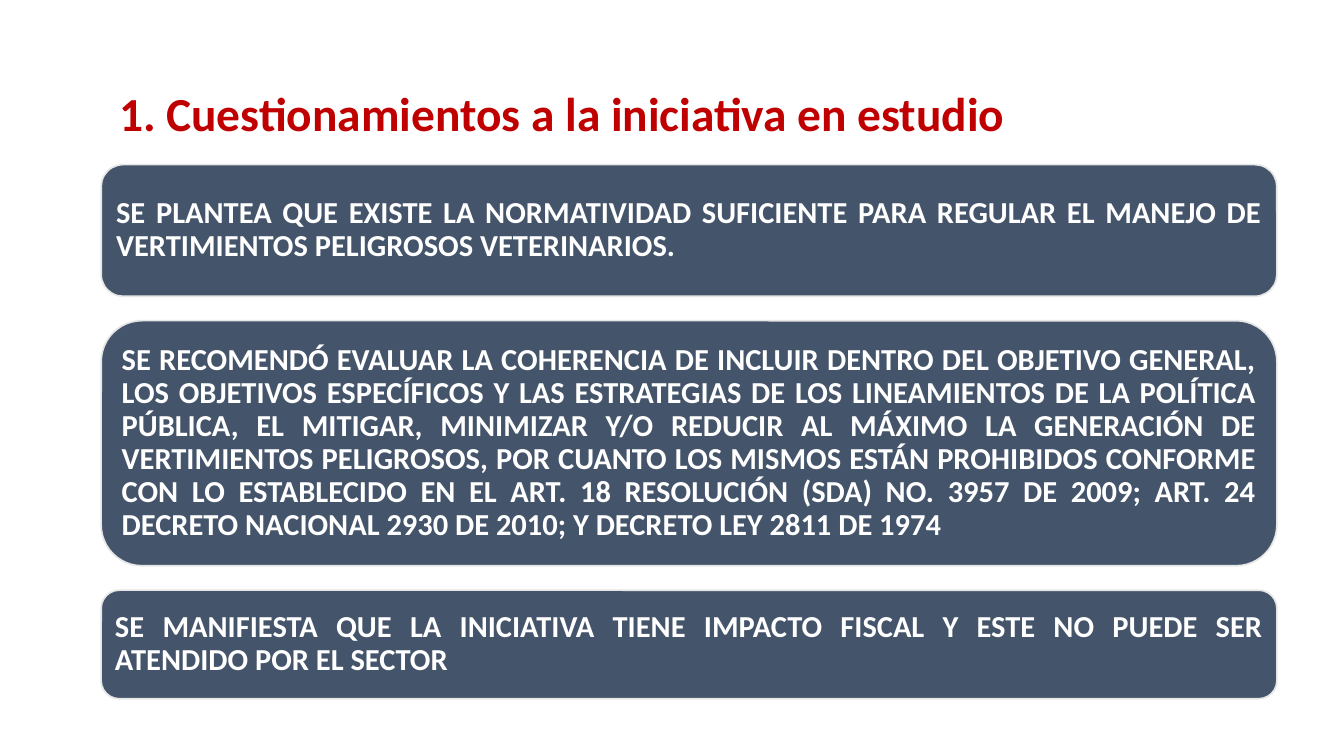
from pptx import Presentation
from pptx.dml.color import RGBColor
from pptx.enum.shapes import MSO_SHAPE
from pptx.enum.text import MSO_ANCHOR, MSO_AUTO_SIZE, PP_ALIGN
from pptx.util import Inches, Pt

COLORS = {"title": "C00000", "card": "44546A", "border": "E7E6E6", "card_text": "FFFFFF"}
LEFT, CARD_WIDTH, FIRST_TOP, GAP = 0.83, 9.64, 1.35, 0.2

TITLE = "1. Cuestionamientos a la iniciativa en estudio"
QUESTIONS = [
    (1.08, "SE PLANTEA QUE EXISTE LA NORMATIVIDAD SUFICIENTE PARA REGULAR EL MANEJO DE "
           "VERTIMIENTOS PELIGROSOS VETERINARIOS."),
    (2.01, "SE RECOMENDÓ EVALUAR LA COHERENCIA DE INCLUIR DENTRO DEL OBJETIVO GENERAL, "
           "LOS OBJETIVOS ESPECÍFICOS Y LAS ESTRATEGIAS DE LOS LINEAMIENTOS DE LA POLÍTICA "
           "PÚBLICA, EL MITIGAR, MINIMIZAR Y/O REDUCIR AL MÁXIMO LA GENERACIÓN DE "
           "VERTIMIENTOS PELIGROSOS, POR CUANTO LOS MISMOS ESTÁN PROHIBIDOS CONFORME "
           "CON LO ESTABLECIDO EN EL ART. 18 RESOLUCIÓN (SDA) NO. 3957 DE 2009; ART. 24 "
           "DECRETO NACIONAL 2930 DE 2010; Y DECRETO LEY 2811 DE 1974"),
    (0.89, "SE MANIFIESTA QUE LA INICIATIVA TIENE IMPACTO FISCAL Y ESTE NO PUEDE SER "
           "ATENDIDO POR EL SECTOR"),
]


class SlideBuilder:
    """Holds the type style and the slide being built."""

    def __init__(self, slide, font="Calibri"):
        self.slide = slide
        self.font = font

    def color(self, name):
        return RGBColor.from_string(COLORS[name])

    def add_text(self, frame, text, size, color, align):
        paragraph = frame.paragraphs[0]
        paragraph.alignment = align
        run = paragraph.add_run()
        run.text = text
        run.font.name = self.font
        run.font.size = Pt(size)
        run.font.bold = True
        run.font.color.rgb = self.color(color)
        return paragraph

    def title(self, text, left, top, width, height):
        box = self.slide.shapes.add_textbox(
            Inches(left), Inches(top), Inches(width), Inches(height))
        frame = box.text_frame
        frame.word_wrap = False
        frame.auto_size = MSO_AUTO_SIZE.SHAPE_TO_FIT_TEXT
        self.add_text(frame, text, 28, "title", PP_ALIGN.CENTER)

    def card(self, text, left, top, width, height):
        card = self.slide.shapes.add_shape(
            MSO_SHAPE.ROUNDED_RECTANGLE,
            Inches(left), Inches(top), Inches(width), Inches(height))
        card.shadow.inherit = False
        card.fill.solid()
        card.fill.fore_color.rgb = self.color("card")
        card.line.color.rgb = self.color("border")
        card.line.width = Pt(1)
        frame = card.text_frame
        frame.word_wrap = True
        frame.vertical_anchor = MSO_ANCHOR.MIDDLE
        frame.margin_left = frame.margin_right = Inches(0.07)
        frame.margin_top = frame.margin_bottom = Inches(0.07)
        paragraph = self.add_text(frame, text, 18, "card_text", PP_ALIGN.JUSTIFY)
        paragraph.line_spacing = 0.9


def main():
    deck = Presentation()
    deck.slide_width, deck.slide_height = Inches(11.02), Inches(6.2)
    builder = SlideBuilder(deck.slides.add_slide(deck.slide_layouts[6]))
    builder.title(TITLE, LEFT, 0.64, 7.55, 0.57)
    top = FIRST_TOP
    for height, question in QUESTIONS:
        builder.card(question, LEFT, top, CARD_WIDTH, height)
        top += height + GAP
    deck.save("out.pptx")


if __name__ == "__main__":
    main()
